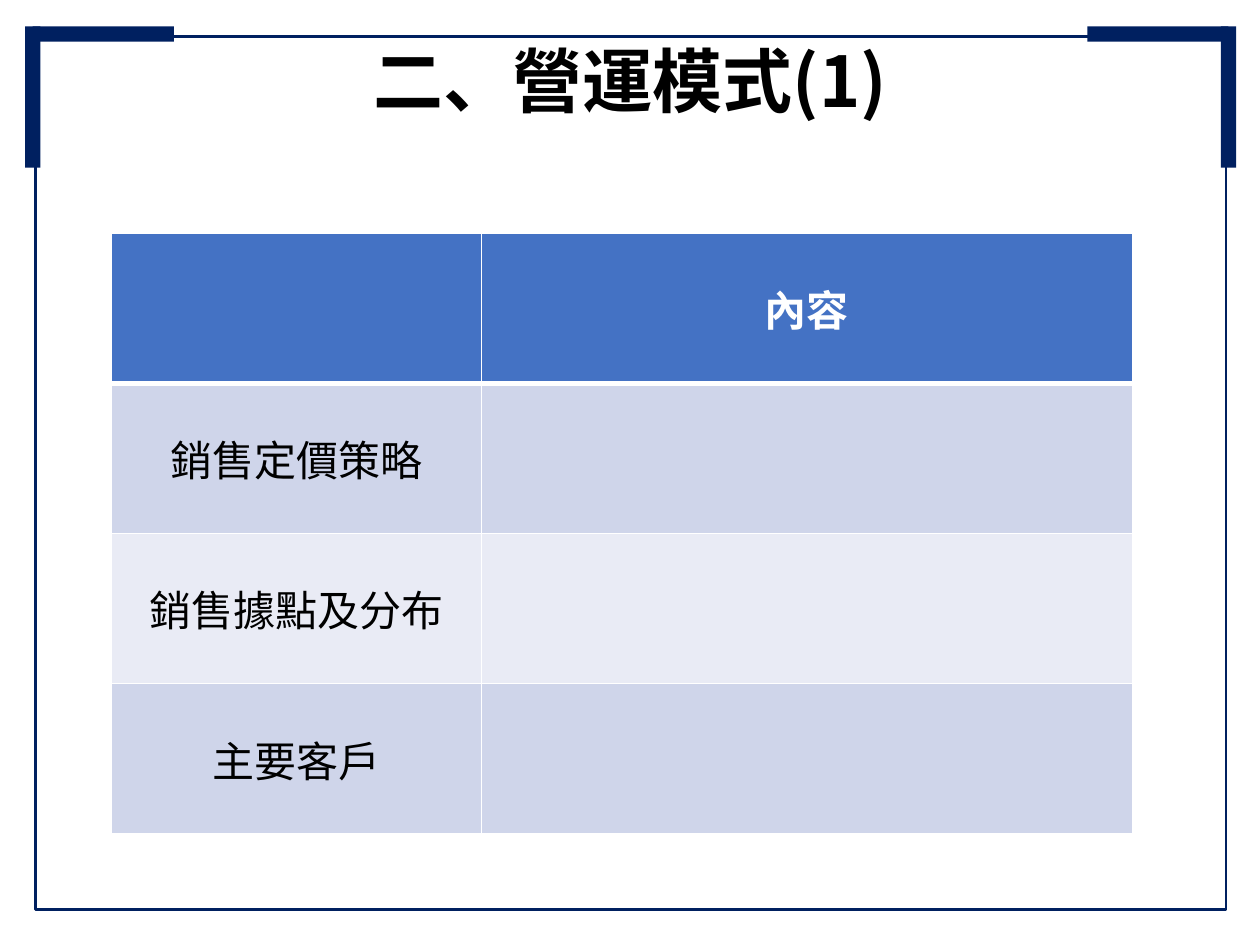
from lxml import etree
from pptx import Presentation, util as u
from pptx.dml.color import RGBColor
from pptx.enum import shapes, text
from pptx.oxml import ns

FONT = "Noto Sans CJK SC"
NAVY, WHITE, BLACK = "002060", "FFFFFF", "000000"
HEADER, BANDS = "4472C4", ("CFD5EA", "E9EBF5")
ROWS = [("", "內容"), ("銷售定價策略", ""), ("銷售據點及分布", ""), ("主要客戶", "")]


def colour(value):
    """Turn a hex string into a colour."""
    return RGBColor.from_string(value)


def write(frame, words, size=24, ink=BLACK, bold=False):
    """Write one centred paragraph in the slide's font."""
    para = frame.paragraphs[0]
    para.alignment = text.PP_ALIGN.CENTER
    span = para.add_run()
    span.text = words
    span.font.size, span.font.bold, span.font.name = u.Pt(size), bold, FONT
    span.font.color.rgb = colour(ink)
    etree.SubElement(span.font._element, ns.qn("a:ea"), typeface=FONT)


def add_box(page, left, top, width, height, fill=None, line=None):
    """Add a rectangle with a plain fill or a plain outline."""
    box = page.shapes.add_shape(shapes.MSO_SHAPE.RECTANGLE, *map(u.Inches, (left, top, width, height)))
    box.shadow.inherit = False
    if fill:
        box.fill.solid()
        box.fill.fore_color.rgb = colour(fill)
    else:
        box.fill.background()
    if line:
        box.line.color.rgb = colour(line)
        box.line.width = u.Pt(1.5)
    else:
        box.line.fill.background()


def add_frame(page, left, top, width, height, arm=1.12, bar=0.12, overhang=0.08):
    """Outline the page and put a thick bracket on both top corners."""
    add_box(page, left, top, width, height, line=NAVY)
    outer_left, outer_right = left - overhang, left + width + overhang
    outer_top = top - overhang
    for upright, across in ((outer_left, outer_left + bar / 2),
                            (outer_right - bar, outer_right - bar / 2 - arm)):
        add_box(page, across, outer_top, arm, bar, fill=NAVY)
        add_box(page, upright, outer_top, bar, arm, fill=NAVY)


def add_title(page, words, left, top, width, height):
    """Place and fill the title placeholder."""
    title = page.shapes.title
    title.left, title.top, title.width, title.height = map(u.Inches, (left, top, width, height))
    frame = title.text_frame
    frame.word_wrap = True
    frame.auto_size = text.MSO_AUTO_SIZE.NONE
    frame.vertical_anchor = text.MSO_ANCHOR.MIDDLE
    write(frame, words, size=40, bold=True)


def add_borders(cell, **widths):
    """Draw white cell edges with the given widths in points."""
    properties = cell._tc.get_or_add_tcPr()
    for side in "LRTB":
        edge = etree.SubElement(properties, ns.qn("a:ln" + side), w=str(u.Pt(widths.get(side, 1))))
        fill = etree.SubElement(edge, ns.qn("a:solidFill"))
        etree.SubElement(fill, ns.qn("a:srgbClr"), val=WHITE)


def add_grid(page, rows, left, top, width, height, label_width):
    """Add the table with a header row and banded body rows."""
    box = page.shapes.add_table(len(rows), 2, *map(u.Inches, (left, top, width, height)))
    table = box.table
    for column, span in zip(table.columns, (label_width, width - label_width)):
        column.width = u.Inches(span)
    for number, row in enumerate(rows):
        header = number == 0
        for cell, words in zip(table.rows[number].cells, row):
            add_borders(cell, B=3 if header else 1, T=3 if number == 1 else 1)
            cell.fill.solid()
            cell.fill.fore_color.rgb = colour(HEADER if header else BANDS[(number - 1) % 2])
            cell.vertical_anchor = text.MSO_ANCHOR.MIDDLE
            if words:
                write(cell.text_frame, words, ink=WHITE if header else BLACK, bold=header)


def main():
    """Build the slide and save it."""
    deck = Presentation()
    deck.slide_width, deck.slide_height = u.Inches(10), u.Inches(7.5)
    page = deck.slides.add_slide(deck.slide_layouts[5])
    add_frame(page, 0.28, 0.29, 9.45, 6.93)
    add_grid(page, ROWS, 0.88, 1.85, 8.11, 4.77, label_width=2.94)
    add_title(page, "二、營運模式(1)", 0.5, 0.13, 9, 1.01)
    deck.save("out.pptx")


if __name__ == "__main__":
    main()
